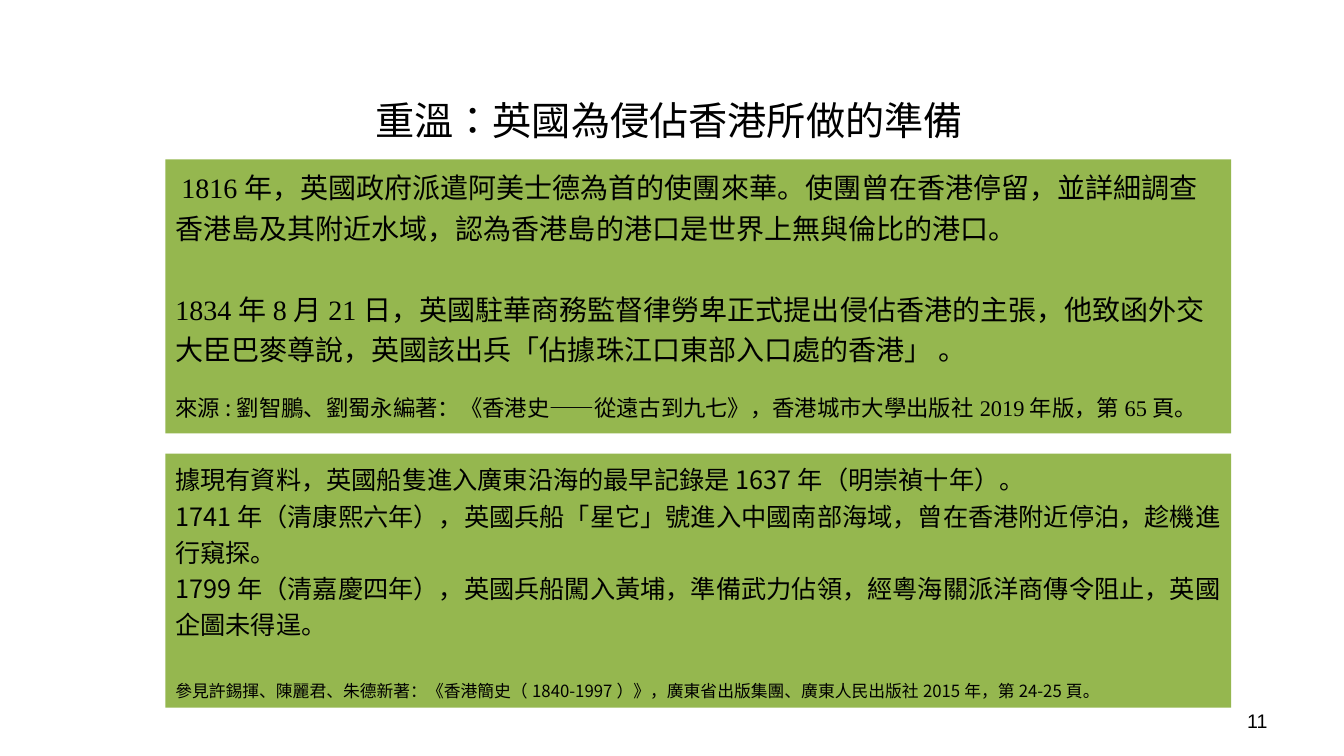
from lxml import etree
from pptx import Presentation
from pptx.dml.color import RGBColor
from pptx.enum.lang import MSO_LANGUAGE_ID
from pptx.enum.shapes import MSO_SHAPE
from pptx.enum.text import MSO_ANCHOR, PP_ALIGN
from pptx.oxml.ns import qn
from pptx.util import Inches, Pt

RECT = MSO_SHAPE.RECTANGLE
TOP, MIDDLE = MSO_ANCHOR.TOP, MSO_ANCHOR.MIDDLE
LEFT, CENTER, RIGHT = PP_ALIGN.LEFT, PP_ALIGN.CENTER, PP_ALIGN.RIGHT
TRAD = MSO_LANGUAGE_ID.TRADITIONAL_CHINESE
SIMP = MSO_LANGUAGE_ID.SIMPLIFIED_CHINESE
GREEN = RGBColor(0x95, 0xB7, 0x4F)
BLACK = RGBColor(0, 0, 0)
HAN, ROMAN, SANS = "Noto Sans CJK SC", "Times New Roman", "Arial"

# Content: each paragraph is (size, line spacing, space before, first indent, runs of (text, font))
TITLE = [(28, 1.0, 0, 0, [("重溫：英國為侵佔香港所做的準備", HAN)])]
NUMBER = [(14, 1.0, 0, 0, [("11", SANS)])]
PLANS = [
    (20, 1.2, 0, 0.06, [
        ("1816年", ROMAN),
        ("，英國政府派遣阿美士德為首的使團來華。使團曾在香港停留，並詳細調查"
         "香港島及其附近水域，認為香港島的港口是世界上無與倫比的港口。", HAN)]),
    (20, 1.2, 29, 0, [
        ("1834年8月21", ROMAN),
        ("日，英國駐華商務監督律勞卑正式提出侵佔香港的主張，他致函外交"
         "大臣巴麥尊說，英國該出兵「佔據珠江口東部入口處的香港」 。", HAN)]),
    (16, 1.0, 20, 0, [
        ("來源:劉智鵬、劉蜀永編著：《香港史——從遠古到九七》，香港城市大學出版社", HAN),
        ("2019年版，第65", ROMAN),
        ("頁。", HAN)]),
]
SHIPS = [
    (18, 1.2, 0, 0, [("據現有資料，英國船隻進入廣東沿海的最早記錄是1637年（明崇禎十年）。", HAN)]),
    (18, 1.2, 0, 0, [("1741年（清康熙六年），英國兵船「星它」號進入中國南部海域，"
                      "曾在香港附近停泊，趁機進行窺探。", HAN)]),
    (18, 1.2, 0, 0, [("1799年（清嘉慶四年），英國兵船闖入黃埔，準備武力佔領，"
                      "經粵海關派洋商傳令阻止，英國企圖未得逞。", HAN)]),
    (12, 1.2, 26, 0, [("參見許錫揮、陳麗君、朱德新著：《香港簡史（1840-1997）》，"
                       "廣東省出版集團、廣東人民出版社2015年，第24-25頁。", HAN)]),
]
PANELS = [(1.58, 2.72, PLANS), (4.5, 2.52, SHIPS)]

deck = Presentation()
deck.slide_width, deck.slide_height = Inches(13.33), Inches(7.5)
slide = deck.slides.add_slide(deck.slide_layouts[6])


def write(shape, paras, align, anchor, lang):
    frame = shape.text_frame
    frame.word_wrap = True
    frame.vertical_anchor = anchor
    for i, (size, spacing, before, indent, runs) in enumerate(paras):
        para = frame.add_paragraph() if i else frame.paragraphs[0]
        para.alignment = align
        para.line_spacing = spacing
        if before:
            para.space_before = Pt(before)
        if indent:
            para._p.get_or_add_pPr().set("indent", str(Inches(indent)))
        for text, face in runs:
            run = para.add_run()
            run.text = text
            font = run.font
            font.size = Pt(size)
            font.color.rgb = BLACK
            font.language_id = lang
            font.name = face
            # Chinese glyphs take the East Asian face
            etree.SubElement(run._r.rPr, qn("a:ea")).set("typeface", HAN)


# Title
title = slide.shapes.add_textbox(Inches(2.43), Inches(0.79), Inches(8.41), Inches(0.79))
write(title, TITLE, CENTER, MIDDLE, TRAD)

# Green panels
for top, height, paras in PANELS:
    panel = slide.shapes.add_shape(RECT, Inches(1.64), Inches(top), Inches(10.57), Inches(height))
    panel.shadow.inherit = False
    panel.fill.solid()
    panel.fill.fore_color.rgb = GREEN
    panel.line.fill.background()
    write(panel, paras, LEFT, TOP, SIMP)

# Slide number
number = slide.shapes.add_textbox(Inches(9.56), Inches(6.95), Inches(3.11), Inches(0.4))
write(number, NUMBER, RIGHT, MIDDLE, TRAD)

deck.save("out.pptx")
